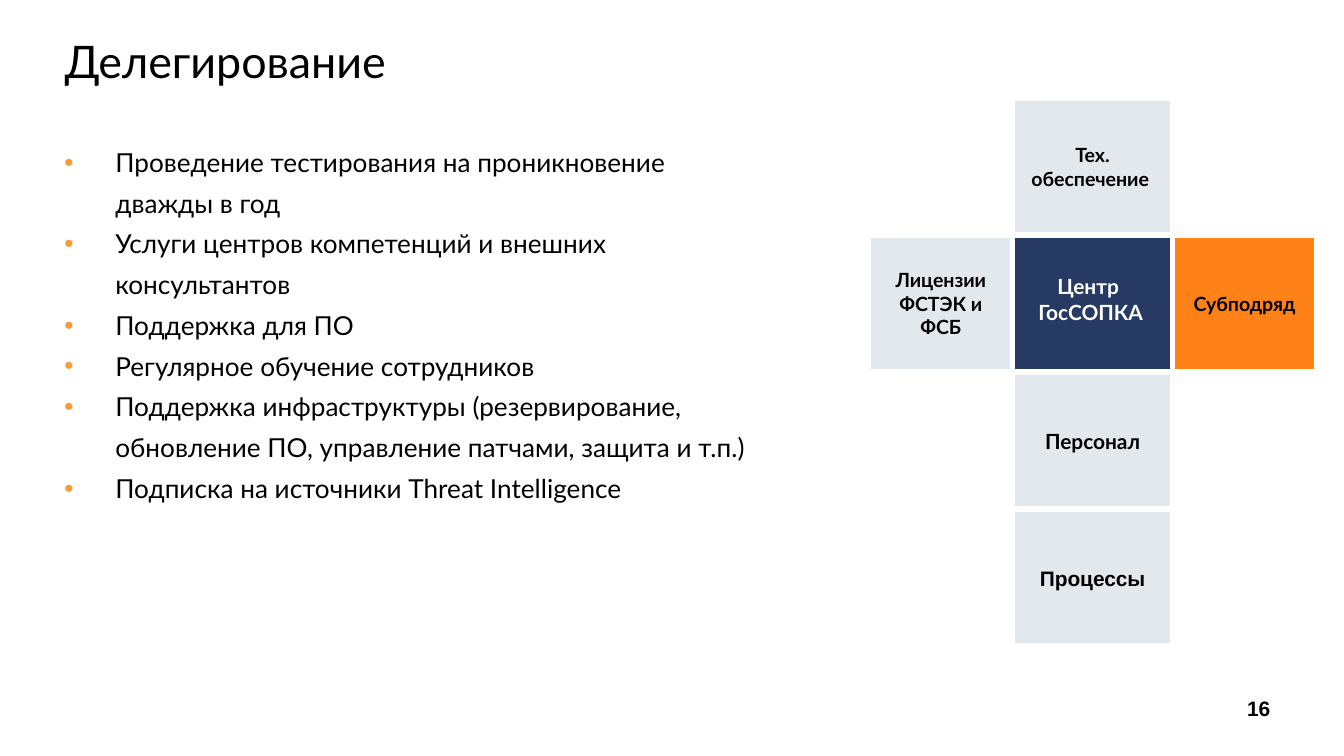
from lxml import etree
from pptx import Presentation
from pptx.dml.color import RGBColor
from pptx.enum.shapes import MSO_SHAPE
from pptx.enum.text import MSO_ANCHOR, PP_ALIGN
from pptx.oxml.ns import qn
from pptx.util import Inches, Pt

RECT = MSO_SHAPE.RECTANGLE
MIDDLE = MSO_ANCHOR.MIDDLE
LEFT, CENTER = PP_ALIGN.LEFT, PP_ALIGN.CENTER

BLACK = RGBColor(0, 0, 0)
WHITE = RGBColor(255, 255, 255)
NAVY = RGBColor(0x27, 0x3A, 0x64)
ORANGE = RGBColor(0xFF, 0x82, 0x18)
GRAY = RGBColor(0xE3, 0xE8, 0xEC)
AMBER = RGBColor(0xFF, 0x99, 0x33)

WIDE = 10
TALL = WIDE * 9 / 16
TOP, STEP, HIGH = 0.76, 1.02, 0.96
COLS = [(6.49, 1.02), (7.56, 1.14), (8.75, 1.02)]

TILES = [
    (1, 1, NAVY, "", {}),
    (2, 1, ORANGE, "Субподряд", {}),
    (1, 2, GRAY, "Персонал", {"size": 11.2}),
    (0, 1, GRAY, "Лицензии\nФСТЭК и ФСБ", {}),
    (1, 0, GRAY, "Тех.\nобеспечение ", {}),
    (1, 3, GRAY, "Процессы", {"size": 11.2, "font": "Arial"}),
]

POINTS = [
    "Проведение тестирования на проникновение дважды в год",
    "Услуги центров компетенций и внешних консультантов",
    "Поддержка для ПО",
    "Регулярное обучение сотрудников",
    "Поддержка инфраструктуры (резервирование, обновление ПО, "
    "управление патчами, защита и т.п.)",
    "Подписка на источники Threat Intelligence",
]


def add_bullet(para, color, indent):
    props = para._p.get_or_add_pPr()
    props.set("marL", str(Inches(indent)))
    props.set("indent", str(-Inches(indent)))
    tint = etree.SubElement(props, qn("a:buClr"))
    etree.SubElement(tint, qn("a:srgbClr"), val=str(color))
    etree.SubElement(props, qn("a:buFont"), typeface="Arial")
    etree.SubElement(props, qn("a:buChar"), char="•")


def write(frame, text, size=10.5, font="Lato", color=BLACK, bold=False,
          align=LEFT, space=None, bullet=None):
    for i, line in enumerate(text.split("\n")):
        para = frame.add_paragraph() if i else frame.paragraphs[0]
        if bullet is not None:
            add_bullet(para, bullet, 0.38)
        para.alignment = align
        para.line_spacing = space
        run = para.add_run()
        run.text = line
        run.font.size = Pt(size)
        run.font.name = font
        run.font.bold = bold
        run.font.color.rgb = color


class Board:
    def __init__(self, slide):
        self.slide = slide
        self.label = {"bold": True, "align": CENTER}

    def text(self, left, top, width, height, text, wrap=True, inset=0.1,
             **style):
        box = self.slide.shapes.add_textbox(
            Inches(left), Inches(top), Inches(width), Inches(height))
        frame = box.text_frame
        frame.word_wrap = wrap
        frame.margin_left = Inches(inset)
        write(frame, text, **style)

    def tile(self, col, row, fill, text, style):
        left, width = COLS[col]
        shape = self.slide.shapes.add_shape(
            RECT, Inches(left), Inches(TOP + row * STEP),
            Inches(width), Inches(HIGH))
        shape.shadow.inherit = False
        shape.fill.solid()
        shape.fill.fore_color.rgb = fill
        shape.line.color.rgb = fill
        shape.line.width = Pt(1)
        edge = shape._element.spPr.find(qn("a:ln"))
        etree.SubElement(edge, qn("a:miter"), lim="800000")
        if text:
            frame = shape.text_frame
            frame.word_wrap = True
            frame.vertical_anchor = MIDDLE
            write(frame, text, **self.label, **style)


def main():
    deck = Presentation()
    deck.slide_width, deck.slide_height = Inches(WIDE), Inches(TALL)
    board = Board(deck.slides.add_slide(deck.slide_layouts[6]))
    board.text(9.17, 5.13, 0.39, 0.29, "16", wrap=False, size=11.2,
               font="Arial", **board.label)
    board.text(0.48, 0.25, 8.99, 0.47, "Делегирование", inset=0,
               size=24, space=0.9)
    for tile in TILES:
        board.tile(*tile)
    board.text(7.56, 1.99, 1.11, 0.48, "Центр \nГосСОПКА", size=11.2,
               color=WHITE, **board.label)
    board.text(0.38, 0.97, 5.42, 3.08, "\n".join(POINTS), size=14,
               space=1.3, bullet=AMBER)
    deck.save("out.pptx")


if __name__ == "__main__":
    main()
